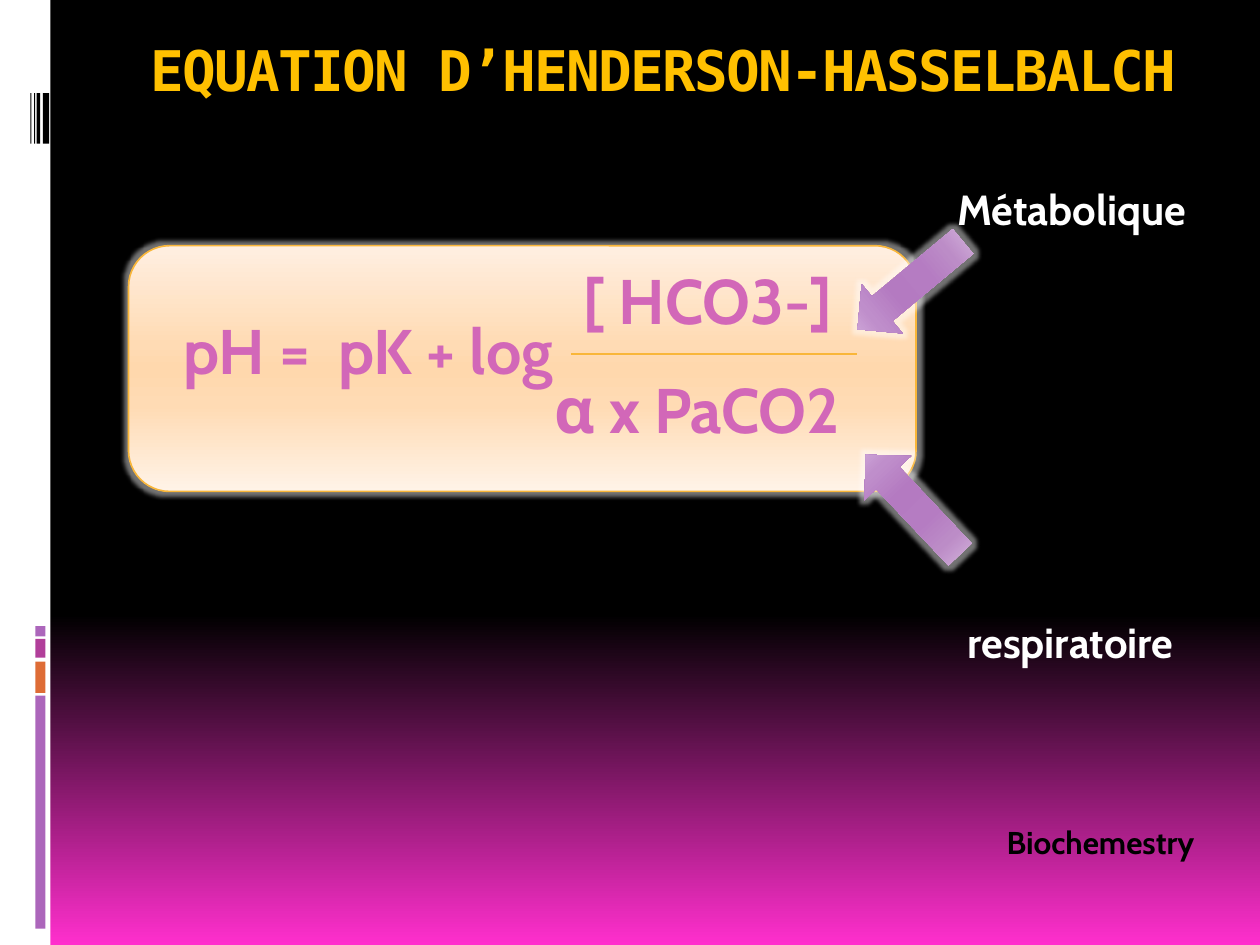
from dataclasses import dataclass

from lxml import etree
from pptx import Presentation
from pptx.dml.color import RGBColor
from pptx.enum.shapes import MSO_CONNECTOR, MSO_SHAPE
from pptx.enum.text import PP_ALIGN
from pptx.oxml.ns import qn
from pptx.util import Inches, Pt

RECTANGLE = MSO_SHAPE.RECTANGLE
ROUNDED = MSO_SHAPE.ROUNDED_RECTANGLE
DOWN_ARROW = MSO_SHAPE.DOWN_ARROW
STRAIGHT = MSO_CONNECTOR.STRAIGHT
LEFT, CENTER = PP_ALIGN.LEFT, PP_ALIGN.CENTER


@dataclass(frozen=True)
class Theme:
    white: str = "FFFFFF"
    black: str = "000000"
    purple: str = "AC66BB"
    magenta: str = "B13F9A"
    orange: str = "DE6C36"
    gold: str = "F9B639"
    title: str = "FFC000"
    formula: str = "D267B8"
    body_font: str = "Cabin"
    title_font: str = "DejaVu Sans Mono"
    title_size: int = 32
    formula_size: int = 36
    label_size: int = 24
    footer_size: int = 18
    background: tuple = ((0, "000000"), (65, "000000"), (100, "FF2FCD"))
    panel: tuple = ((0, "FFEFE1"), (40, "FFDBB4"), (50, "FFD8AD"),
                    (65, "FFDBB4"), (100, "FFF3E7"))
    arrow: tuple = ((0, "DFC4E6"), (25, "BC8CC7"), (40, "B57CC2"), (50, "B47AC1"),
                    (60, "B57CC2"), (75, "BF8ECB"), (100, "E0C3E8"))


class SlideBuilder:
    def __init__(self, slide, theme):
        self.slide = slide
        self.theme = theme

    def gradient(self, fill, element, stops):
        """Fill from top to bottom with (percent, colour) stops."""
        fill.gradient()
        fill.gradient_angle = 270
        stop_list = element.find(".//" + qn("a:gsLst"))
        for old_stop in list(stop_list):
            stop_list.remove(old_stop)
        for percent, color in stops:
            stop = etree.SubElement(stop_list, qn("a:gs"), pos=str(percent * 1000))
            etree.SubElement(stop, qn("a:srgbClr"), val=color)

    def background(self, stops):
        self.gradient(self.slide.background.fill, self.slide.element, stops)

    def shape(self, kind, left, top, width, height):
        shape = self.slide.shapes.add_shape(
            kind, Inches(left), Inches(top), Inches(width), Inches(height))
        shape.shadow.inherit = False
        shape.line.fill.background()
        return shape

    def bar(self, left, top, width, height, color):
        shape = self.shape(RECTANGLE, left, top, width, height)
        shape.fill.solid()
        shape.fill.fore_color.rgb = RGBColor.from_string(color)

    def glowing_shape(self, kind, box, stops, rotation=0):
        shape = self.shape(kind, *box)
        shape.rotation = rotation
        self.gradient(shape.fill, shape.element, stops)
        effects = shape.element.find(".//" + qn("a:effectLst"))
        glow = etree.SubElement(effects, qn("a:glow"), rad=str(Inches(0.07)))
        color = etree.SubElement(glow, qn("a:srgbClr"), val=self.theme.white)
        etree.SubElement(color, qn("a:alpha"), val="45000")
        return shape

    def outline(self, line, color, width):
        line.color.rgb = RGBColor.from_string(color)
        line.width = Pt(width)

    def line(self, left, right, y, color, width):
        connector = self.slide.shapes.add_connector(
            STRAIGHT, Inches(left), Inches(y), Inches(right), Inches(y))
        self.outline(connector.line, color, width)
        etree.SubElement(connector.element.spPr, qn("a:effectLst"))

    def text(self, words, box, size, color, font=None, align=LEFT, spacing=0):
        """Add one bold line; spacing is in points between letters."""
        frame = self.slide.shapes.add_textbox(*map(Inches, box)).text_frame
        frame.word_wrap = True
        paragraph = frame.paragraphs[0]
        paragraph.alignment = align
        run = paragraph.add_run()
        run.text = words
        paragraph.font.name = font or self.theme.body_font
        paragraph.font.size = Pt(size)
        paragraph.font.bold = True
        paragraph.font.color.rgb = RGBColor.from_string(color)
        if spacing:
            run.font.bold = True
            run.font._element.set("spc", str(spacing * 100))


def main():
    theme = Theme()
    presentation = Presentation()
    presentation.slide_width, presentation.slide_height = Inches(10), Inches(7.5)
    slide = presentation.slides.add_slide(presentation.slide_layouts[6])
    builder = SlideBuilder(slide, theme)

    builder.background(theme.background)
    builder.bar(0, 0, 0.4, 7.5, theme.white)
    for top, height, color in ((5.52, 1.85, theme.purple), (5.25, 0.25, theme.orange),
                               (5.07, 0.15, theme.magenta), (4.97, 0.08, theme.purple)):
        builder.bar(0.28, top, 0.08, height, color)
    for left, width in ((0.34, 0.05), (0.29, 0.03), (0.27, 0.01), (0.24, 0.01)):
        builder.bar(left, 0.74, width, 0.4, theme.black)

    panel = builder.glowing_shape(ROUNDED, (1.02, 1.95, 6.25, 1.95), theme.panel)
    builder.outline(panel.line, theme.gold, 0.94)

    builder.text("EQUATION D’HENDERSON-HASSELBALCH", (1.02, 0.23, 8.5, 1),
                 theme.title_size, theme.title, theme.title_font, CENTER, -1)

    builder.line(4.53, 6.8, 2.81, theme.gold, 1.5)
    for words, left, top, width in (("pH =  pK + log", 1.36, 2.42, 3.3),
                                    ("[ HCO3-]", 4.53, 2.03, 2.27),
                                    ("α x PaCO2", 4.3, 2.89, 2.5)):
        builder.text(words, (left, top, width, 0.71), theme.formula_size, theme.formula)

    builder.text("Métabolique", (7.5, 1.41, 2.03, 0.5), theme.label_size, theme.white)
    builder.text("respiratoire", (7.58, 4.84, 2.19, 0.5), theme.label_size, theme.white)
    for left, top, rotation in ((6.97, 1.72, 50.2), (6.99, 3.46, 136.6)):
        builder.glowing_shape(DOWN_ARROW, (left, top, 0.51, 1.09), theme.arrow, rotation)

    builder.text("Biochemestry", (7.89, 6.48, 1.72, 0.71), theme.footer_size, theme.black)
    presentation.save("out.pptx")


if __name__ == "__main__":
    main()
